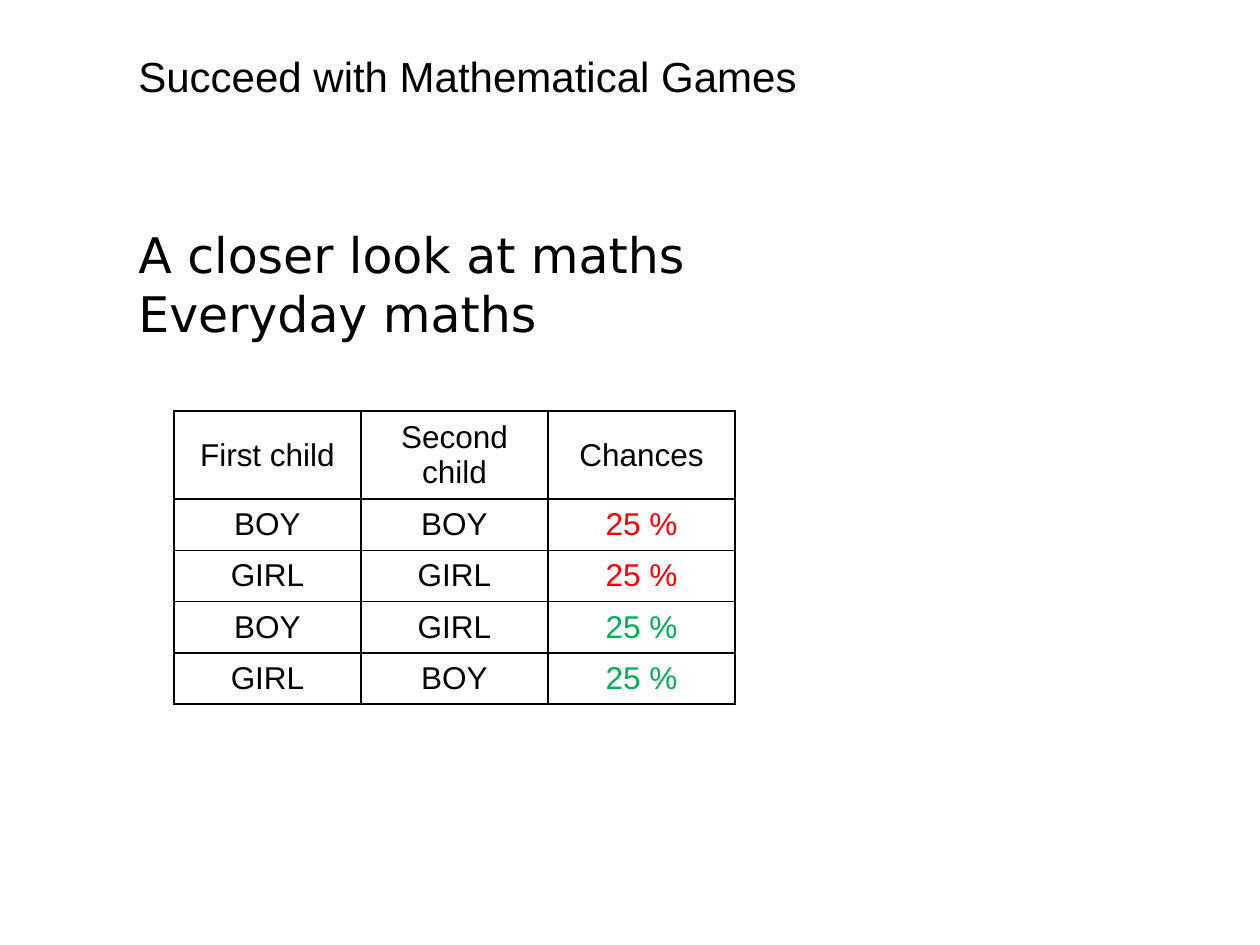
"""Build the slide on everyday maths with its table of chances."""
from dataclasses import dataclass

from lxml.etree import SubElement
from pptx import Presentation
from pptx.dml.color import RGBColor
from pptx.enum.text import MSO_ANCHOR, MSO_AUTO_SIZE, PP_ALIGN
from pptx.oxml.ns import qn
from pptx.slide import Slide
from pptx.table import _Cell
from pptx.text.text import _Paragraph
from pptx.util import Emu, Pt

BLACK = RGBColor(0, 0, 0)
RED = RGBColor(255, 0, 0)
GREEN = RGBColor(0, 176, 80)
DPI = 126
EDGES = ("a:lnL", "a:lnR", "a:lnT", "a:lnB")


@dataclass
class Label:
    """A text box with its lines and font."""
    box: tuple[int, int, int, int]
    lines: list[str]
    face: str
    size: int
    hang: int = 0


@dataclass
class Row:
    """A table row and the colour of its last cell."""
    texts: tuple[str, str, str]
    tint: RGBColor


LABELS = [
    Label((126, 218, 983, 131), ["A closer look at maths", "Everyday maths"],
          "DejaVu Sans", 28),
    Label((126, 44, 716, 63), ["Succeed with Mathematical Games"],
          "Arial", 24, 47),
]
ROWS = [
    Row(("First child", "Second child", "Chances"), BLACK),
    Row(("BOY", "BOY", "25 %"), RED),
    Row(("GIRL", "GIRL", "25 %"), RED),
    Row(("BOY", "GIRL", "25 %"), GREEN),
    Row(("GIRL", "BOY", "25 %"), GREEN),
]


def px(count: int) -> Emu:
    """Turn pixels into EMU."""
    return Emu(count * 914400 // DPI)


def style(para: _Paragraph, text: str, face: str, size: int,
          tint: RGBColor = BLACK) -> None:
    """Write one run and format it."""
    run = para.add_run()
    run.text = text
    form = {"name": face, "size": Pt(size), "bold": False}
    for key, value in form.items():
        setattr(run.font, key, value)
    run.font.color.rgb = tint


def write(slide: Slide, label: Label) -> None:
    """Draw a text box."""
    frame = slide.shapes.add_textbox(*map(px, label.box)).text_frame
    form = {"word_wrap": True, "auto_size": MSO_AUTO_SIZE.SHAPE_TO_FIT_TEXT}
    for key, value in form.items():
        setattr(frame, key, value)
    for index, line in enumerate(label.lines):
        para = frame.add_paragraph() if index else frame.paragraphs[0]
        if label.hang:
            props = para._p.get_or_add_pPr()
            props.set("marL", str(px(label.hang)))
            props.set("indent", str(-px(label.hang)))
        style(para, line, label.face, label.size)


def frame(cell: _Cell) -> None:
    """Draw thin black borders round a clear cell."""
    props = cell._tc.get_or_add_tcPr()
    for edge in EDGES:
        line = SubElement(props, qn(edge), w=str(Pt(1)))
        fill = SubElement(line, qn("a:solidFill"))
        SubElement(fill, qn("a:srgbClr"), val=str(BLACK))
    cell.fill.background()


def tabulate(slide: Slide, rows: list[Row]) -> None:
    """Draw the table of chances."""
    box = map(px, (174, 411, 561, 256))
    table = slide.shapes.add_table(len(rows), 3, *box).table
    for key in ("first_row", "horz_banding"):
        setattr(table, key, False)
    for line, row in zip(table.rows, rows):
        for col, (cell, text) in enumerate(zip(line.cells, row.texts)):
            frame(cell)
            cell.vertical_anchor = MSO_ANCHOR.MIDDLE
            para = cell.text_frame.paragraphs[0]
            para.alignment = PP_ALIGN.CENTER
            style(para, text, "Arial", 18, row.tint if col == 2 else BLACK)


def main() -> None:
    """Build and save the deck."""
    deck = Presentation()
    deck.slide_width, deck.slide_height = px(1260), px(945)
    slide = deck.slides.add_slide(deck.slide_layouts[6])
    for label in LABELS:
        write(slide, label)
    tabulate(slide, ROWS)
    deck.save("out.pptx")


if __name__ == "__main__":
    main()
